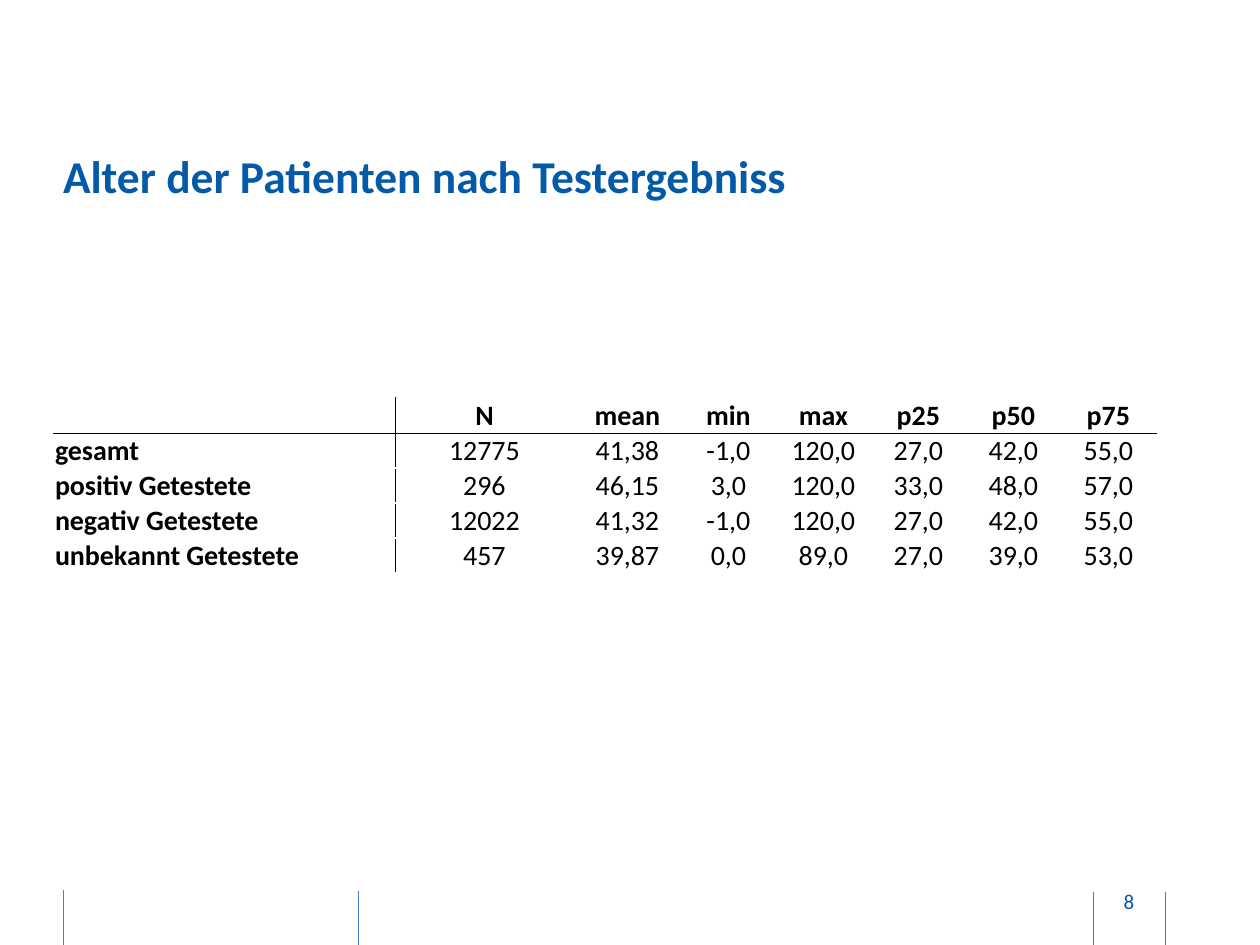
from pptx import Presentation
from pptx.dml.color import RGBColor
from pptx.enum.shapes import MSO_CONNECTOR
from pptx.enum.text import MSO_ANCHOR, PP_ALIGN
from pptx.oxml import parse_xml
from pptx.oxml.ns import nsdecls, qn
from pptx.util import Pt
from lxml.etree import SubElement

PX = 914400 // 126
BLUE = RGBColor(0x04, 0x5A, 0xA6)
RULE = RGBColor(0x4F, 0x81, 0xBD)
BLACK = RGBColor(0, 0, 0)
WHITE = RGBColor(0xFF, 0xFF, 0xFF)
FONT = "Calibri"

FOOTER_RULES = [(63, 890, 946), (358, 891, 946), (1093, 892, 948), (1165, 892, 948)]
COLUMNS = [341, 179, 107] + [95] * 5
ROW_HEIGHT = 35
ROWS = [
    [""] * 8,
    ["", "N", "mean", "min", "max", "p25", "p50", "p75"],
    ["gesamt", "12775", "41,38", "-1,0", "120,0", "27,0", "42,0", "55,0"],
    ["positiv Getestete", "296", "46,15", "3,0", "120,0", "33,0", "48,0", "57,0"],
    ["negativ Getestete", "12022", "41,32", "-1,0", "120,0", "27,0", "42,0", "55,0"],
    ["unbekannt Getestete", "457", "39,87", "0,0", "89,0", "27,0", "39,0", "53,0"],
]


def px(*values):
    """Convert whole pixels to EMU."""
    return [value * PX for value in values]


def set_attrs(target, values):
    """Set each attribute of target named in values."""
    for name, value in values.items():
        setattr(target, name, value)


def write(tf, text, size, color, bold=False, align=PP_ALIGN.LEFT):
    """Write one formatted run into a text frame."""
    p = tf.paragraphs[0]
    p.alignment = align
    r = p.add_run()
    r.text = text
    set_attrs(r.font, {"name": FONT, "size": Pt(size), "bold": bold})
    r.font.color.rgb = color


def set_margins(target, left, top, right, bottom):
    """Set the four insets of a frame or cell in pixels."""
    names = ("margin_left", "margin_top", "margin_right", "margin_bottom")
    set_attrs(target, dict(zip(names, px(left, top, right, bottom))))


def add_title(s, text):
    """Place and format the title placeholder."""
    sp = s.shapes.title
    set_attrs(sp, dict(zip(("left", "top", "width", "height"), px(63, 115, 1100, 121))))
    tf = sp.text_frame
    set_attrs(tf, {"word_wrap": True, "vertical_anchor": MSO_ANCHOR.MIDDLE})
    set_margins(tf, 0, 0, 0, 0)
    write(tf, text, 26, BLUE, bold=True)


def add_page_number(s, text):
    """Add the centred page number."""
    tf = s.shapes.add_textbox(*px(1095, 876, 68, 50)).text_frame
    set_attrs(tf, {"word_wrap": True, "vertical_anchor": MSO_ANCHOR.MIDDLE})
    set_margins(tf, 0, 6, 0, 6)
    write(tf, text, 12, BLUE, align=PP_ALIGN.CENTER)


def add_rule(s, x, top, bottom):
    """Add a thin vertical footer rule."""
    line = s.shapes.add_connector(MSO_CONNECTOR.STRAIGHT, *px(x, top, x, bottom))
    line.line.color.rgb = RULE
    line.line.width = Pt(0.5)
    SubElement(line._element.spPr, qn("a:effectLst"))


def add_borders(cell, sides):
    """Draw thin black borders on the given sides, in L, R, T, B order."""
    for side in sides:
        cell._tc.get_or_add_tcPr().append(parse_xml(
            f'<a:ln{side} {nsdecls("a")} w="{Pt(0.5)}"><a:solidFill>'
            f'<a:srgbClr val="{BLACK}"/></a:solidFill></a:ln{side}>'))


def border_sides(row, col):
    """Return the bordered sides of a cell around the header and label rules."""
    rules = {"L": row > 0 and col == 1, "R": row > 0 and col == 0,
             "T": row == 2, "B": row == 1}
    return [side for side, drawn in rules.items() if drawn]


def fill_cell(cell, text, row, col):
    """Format one table cell and write its text."""
    cell.vertical_anchor = MSO_ANCHOR.BOTTOM
    set_margins(cell, 1, 1, 1, 0)
    add_borders(cell, border_sides(row, col))
    cell.fill.background()
    if text:
        align = PP_ALIGN.CENTER if col else PP_ALIGN.LEFT
        write(cell.text_frame, text, 16, BLACK, row == 1 or col == 0, align)
    else:
        SubElement(cell.text_frame.paragraphs[0]._p, qn("a:endParaRPr"), sz="1600")


def add_age_table(s):
    """Add the table of age statistics by test result."""
    frame = s.shapes.add_table(len(ROWS), len(COLUMNS),
                               *px(54, 363, sum(COLUMNS), ROW_HEIGHT * len(ROWS)))
    table = frame.table
    set_attrs(table, {"first_row": False, "horz_banding": False})
    for column, width in zip(table.columns, COLUMNS):
        column.width = width * PX
    for i, row in enumerate(ROWS):
        table.rows[i].height = ROW_HEIGHT * PX
        for j, text in enumerate(row):
            fill_cell(table.cell(i, j), text, i, j)
    table.cell(0, 0).merge(table.cell(0, 1))


def main():
    """Build and save the slide."""
    prs = Presentation()
    set_attrs(prs, dict(zip(("slide_width", "slide_height"), px(1260, 945))))
    s = prs.slides.add_slide(prs.slide_layouts[5])
    s.background.fill.solid()
    s.background.fill.fore_color.rgb = WHITE
    for rule in FOOTER_RULES:
        add_rule(s, *rule)
    add_page_number(s, "8")
    add_title(s, "Alter der Patienten nach Testergebniss")
    add_age_table(s)
    prs.save("out.pptx")


if __name__ == "__main__":
    main()
